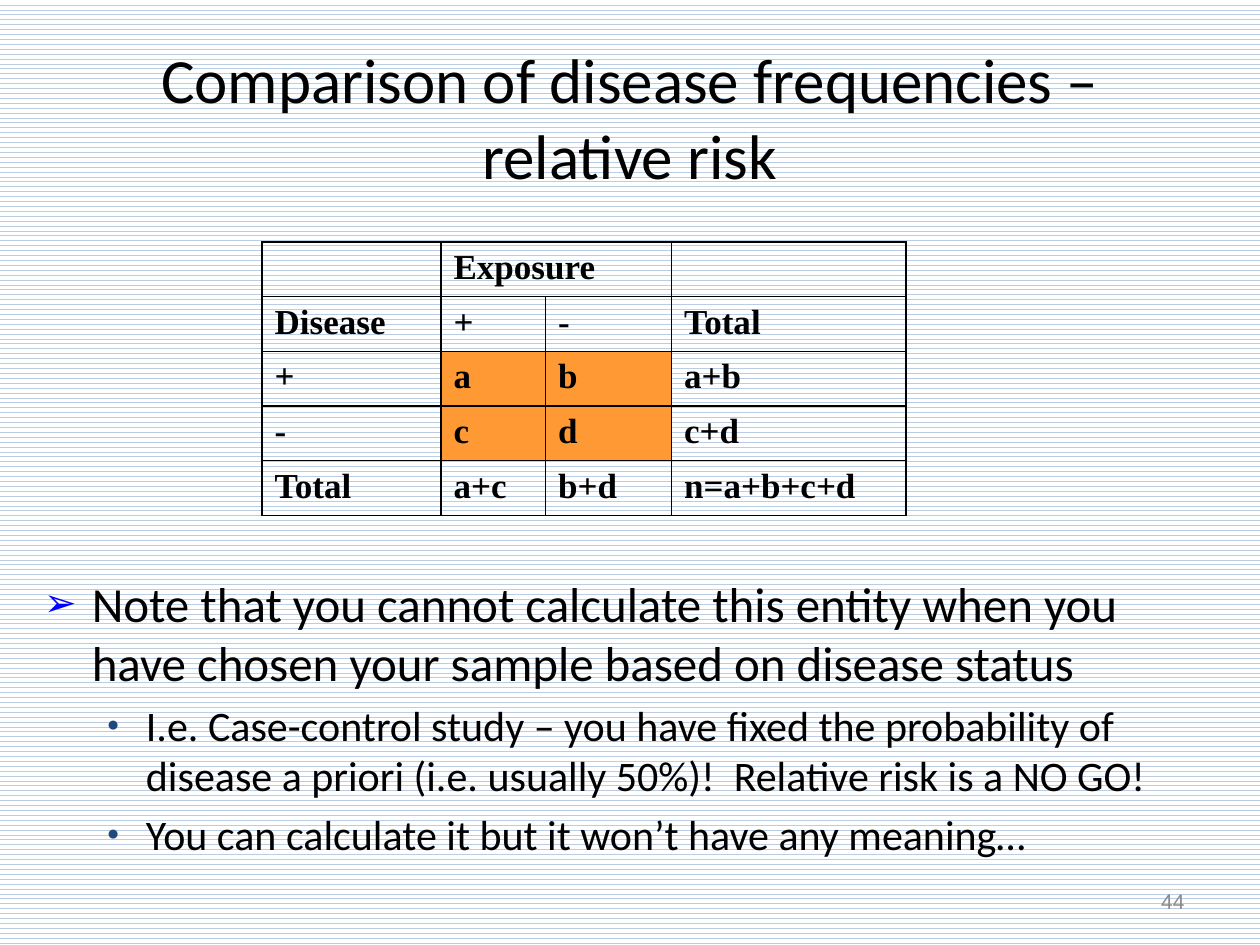
from lxml.etree import SubElement
from pptx import Presentation
from pptx.dml.color import RGBColor
from pptx.enum.dml import MSO_PATTERN
from pptx.enum.text import MSO_ANCHOR as Anchor, PP_ALIGN as Align
from pptx.oxml.ns import qn
from pptx.util import Inches, Pt

TITLE = "Comparison of disease frequencies – relative risk"
ROWS = [
    ("", "Exposure", "", ""),
    ("Disease", "+", "-", "Total"),
    ("+", "a", "b", "a+b"),
    ("-", "c", "d", "c+d"),
    ("Total", "a+c", "b+d", "n=a+b+c+d"),
]
COL_WIDTHS = (1.42, 0.83, 1, 1.86)
ROW_HEIGHT = 0.41
COUNTS = {"a", "b", "c", "d"}
NOTES = [  # level, text
    (0, "Note that you cannot calculate this entity when you have chosen "
        "your sample based on disease status"),
    (1, "I.e. Case-control study – you have fixed the probability of disease "
        "a priori (i.e. usually 50%)!  Relative risk is a NO GO!"),
    (1, "You can calculate it but it won’t have any meaning…"),
]
LEVELS = [  # size, left margin, hanging indent, bullet, bullet colour, bullet %
    (28, 0.38, 0.38, "➢", "0000FF", 80),
    (24, 0.81, 0.31, "●", "1F497D", 50),
]
PAGE = "44"


def rgb(color):
    return RGBColor.from_string(color)


def style(p, size, font="Calibri", color="000000", bold=False):
    for r in p.runs:
        r.font.size, r.font.name, r.font.bold = Pt(size), font, bold
        r.font.color.rgb = rgb(color)


def add_text(slide, box, anchor=Anchor.TOP):
    tf = slide.shapes.add_textbox(*map(Inches, box)).text_frame
    tf.word_wrap = True
    tf.vertical_anchor = anchor
    return tf


def add_line(slide, box, text, align, size, **look):
    p = add_text(slide, box, Anchor.MIDDLE).paragraphs[0]
    p.text, p.alignment = text, align
    style(p, size, **look)


def add_bullet(p, margin, hang, char, color, percent):
    pPr = p._p.get_or_add_pPr()
    pPr.set("marL", str(Inches(margin)))
    pPr.set("indent", str(-Inches(hang)))
    clr = SubElement(pPr, qn("a:buClr"))
    SubElement(clr, qn("a:srgbClr"), val=color)
    SubElement(pPr, qn("a:buSzPct"), val=str(percent * 1000))
    SubElement(pPr, qn("a:buFont"), typeface="Arial")
    SubElement(pPr, qn("a:buChar"), char=char)


def add_borders(cell, color="000000", width=1):
    tcPr = cell._tc.get_or_add_tcPr()
    for side in ("lnL", "lnR", "lnT", "lnB"):
        ln = SubElement(tcPr, qn(f"a:{side}"), w=str(Pt(width)))
        fill = SubElement(ln, qn("a:solidFill"))
        SubElement(fill, qn("a:srgbClr"), val=color)


def add_risk_table(slide, left, top):
    size = sum(COL_WIDTHS), ROW_HEIGHT * len(ROWS)
    table = slide.shapes.add_table(
        len(ROWS), len(COL_WIDTHS), *map(Inches, (left, top, *size))).table
    table.first_row = table.horz_banding = False
    for col, width in zip(table.columns, COL_WIDTHS):
        col.width = Inches(width)
    for i, row in enumerate(ROWS):
        for j, text in enumerate(row):
            cell = table.cell(i, j)
            cell.text = text
            style(cell.text_frame.paragraphs[0], 20, "Times New Roman", bold=True)
            add_borders(cell)
            if text in COUNTS:
                cell.fill.solid()
                cell.fill.fore_color.rgb = rgb("FF9933")
            else:
                cell.fill.background()
    table.cell(0, 1).merge(table.cell(0, 2))


def add_notes(slide, box):
    tf = add_text(slide, box)
    for i, (level, text) in enumerate(NOTES):
        p = tf.add_paragraph() if i else tf.paragraphs[0]
        size, *bullet = LEVELS[level]
        p.text, p.level = text, level
        p.space_before = Pt(0.2 * size)
        style(p, size)
        add_bullet(p, *bullet)


def main():
    prs = Presentation()
    prs.slide_width, prs.slide_height = Inches(10), Inches(7.5)
    s = prs.slides.add_slide(prs.slide_layouts[6])
    bg = s.background.fill
    bg.patterned()
    bg.pattern = MSO_PATTERN.WAVE
    bg.fore_color.rgb, bg.back_color.rgb = rgb("B9CDE5"), rgb("FFFFFF")

    add_line(s, (0.5, 0.3, 9, 1.25), TITLE, Align.CENTER, 36)
    add_notes(s, (0.25, 4.5, 9.25, 1.25))
    add_risk_table(s, 2.08, 1.92)
    add_line(s, (7.17, 6.95, 2.33, 0.4), PAGE, Align.RIGHT, 12,
             font="Arial", color="898989")
    prs.save("out.pptx")


if __name__ == "__main__":
    main()
